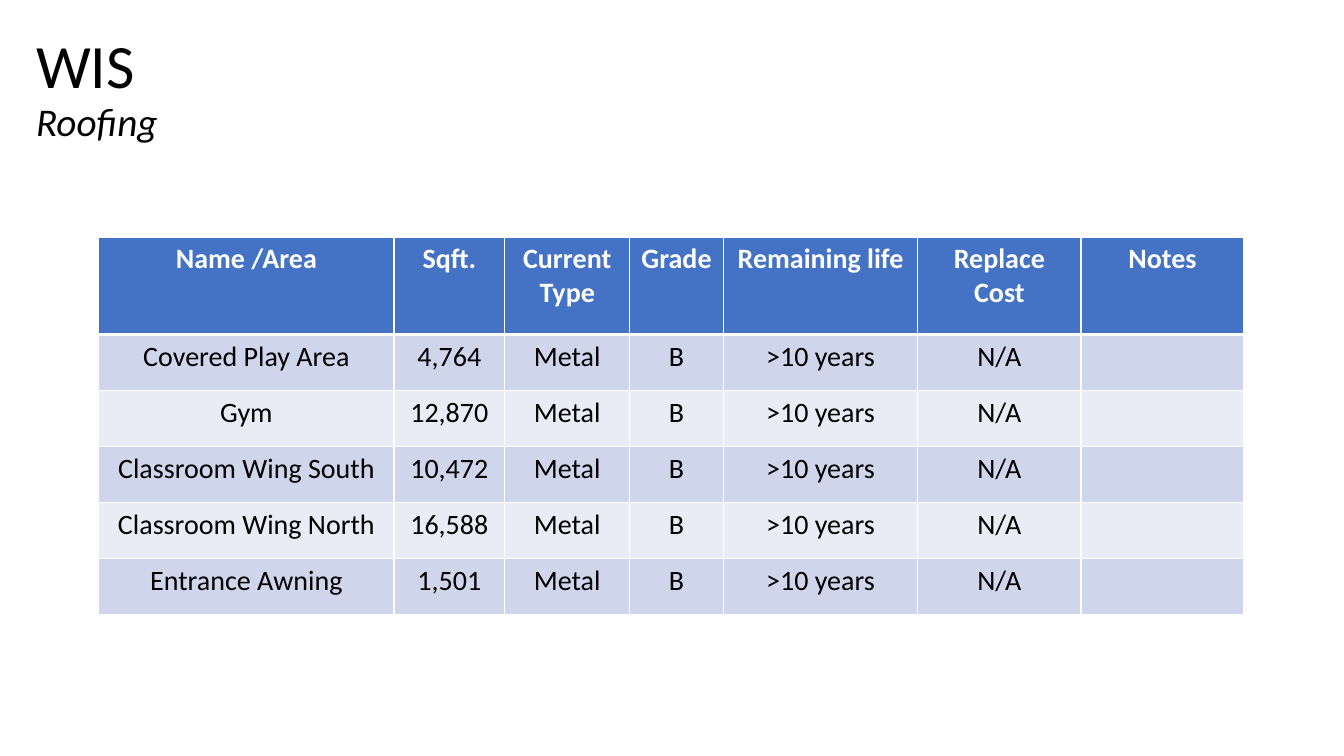
from dataclasses import dataclass

from lxml import etree
from pptx import Presentation
from pptx import util as u
from pptx.dml.color import RGBColor
from pptx.enum import text
from pptx.oxml import ns

FONT = "Calibri"
WHITE, BLACK, BLUE = "FFFFFF", "000000", "4472C4"
BANDS = ("CFD5EA", "E9EBF5")
HEADER_HEIGHT, ROW_HEIGHT = 2.46, 1.41


@dataclass
class Column:
    title: str
    width: float


@dataclass
class Roof:
    area: str
    sqft: str
    type: str = "Metal"
    grade: str = "B"
    life: str = ">10 years"
    cost: str = "N/A"
    notes: str = ""

    def values(self) -> list[str]:
        return [self.area, self.sqft, self.type, self.grade,
                self.life, self.cost, self.notes]


COLUMNS = [
    Column("Name /Area", 7.44),
    Column("Sqft.", 2.79),
    Column("Current\nType", 3.15),
    Column("Grade", 2.36),
    Column("Remaining life", 4.9),
    Column("Replace\nCost", 4.11),
    Column("Notes", 4.11),
]
ROOFS = [
    Roof("Covered Play Area", "4,764"),
    Roof("Gym", "12,870"),
    Roof("Classroom Wing South", "10,472"),
    Roof("Classroom Wing North", "16,588"),
    Roof("Entrance Awning", "1,501"),
]


def rgb(color: str) -> RGBColor:
    return RGBColor.from_string(color)


def add_text(p, content: str, *, size: float, color: str = BLACK,
             bold: bool = False, italic: bool = False, align=None) -> None:
    if align is not None:
        p.alignment = align
    r = p.add_run()
    r.text = content
    r.font.name, r.font.size = FONT, u.Pt(size)
    r.font.bold, r.font.italic = bold, italic
    r.font.color.rgb = rgb(color)


def set_border(cell, side: str, width: float) -> None:
    tc_pr = cell._tc.get_or_add_tcPr()
    ln = etree.SubElement(tc_pr, ns.qn(f"a:ln{side}"), w=str(u.Pt(width)))
    fill = etree.SubElement(ln, ns.qn("a:solidFill"))
    etree.SubElement(fill, ns.qn("a:srgbClr"), val=WHITE)


def fill_cell(cell, content: str, row: int) -> None:
    header = row == 0
    # A thick rule separates the header from the body
    widths = {"L": 1, "R": 1, "T": 3 if row == 1 else 1, "B": 3 if header else 1}
    for side, width in widths.items():
        set_border(cell, side, width)
    cell.fill.solid()
    cell.fill.fore_color.rgb = rgb(BLUE if header else BANDS[(row - 1) % 2])
    if not content:
        return
    tf = cell.text_frame
    for i, line in enumerate(content.split("\n")):
        p = tf.add_paragraph() if i else tf.paragraphs[0]
        add_text(p, line, size=20, color=WHITE if header else BLACK,
                 bold=header, align=text.PP_ALIGN.CENTER)


def add_title(s, title: str, subtitle: str) -> None:
    sp = s.shapes.add_textbox(u.Cm(0.66), u.Cm(0.43), u.Cm(29.21), u.Cm(3.68))
    tf = sp.text_frame
    tf.word_wrap = True
    tf.vertical_anchor = text.MSO_ANCHOR.MIDDLE
    p = tf.paragraphs[0]
    p.line_spacing = 0.9
    add_text(p, title, size=44)
    p.add_line_break()
    add_text(p, subtitle, size=28, italic=True)


def add_roof_table(s, columns: list[Column], roofs: list[Roof]) -> None:
    rows = [[c.title for c in columns]] + [roof.values() for roof in roofs]
    width = sum(c.width for c in columns)
    height = HEADER_HEIGHT + ROW_HEIGHT * len(roofs)
    table = s.shapes.add_table(len(rows), len(columns), u.Cm(2.49), u.Cm(5.97),
                               u.Cm(width), u.Cm(height)).table
    for i, column in enumerate(columns):
        table.columns[i].width = u.Cm(column.width)
    for i, row in enumerate(rows):
        table.rows[i].height = u.Cm(ROW_HEIGHT if i else HEADER_HEIGHT)
        for j, content in enumerate(row):
            fill_cell(table.cell(i, j), content, i)


def main() -> None:
    prs = Presentation()
    prs.slide_width, prs.slide_height = u.Cm(33.87), u.Cm(19.05)
    s = prs.slides.add_slide(prs.slide_layouts[6])
    # Heading
    add_title(s, "WIS", "Roofing")
    # Roof inventory
    add_roof_table(s, COLUMNS, ROOFS)
    prs.save("out.pptx")


if __name__ == "__main__":
    main()
